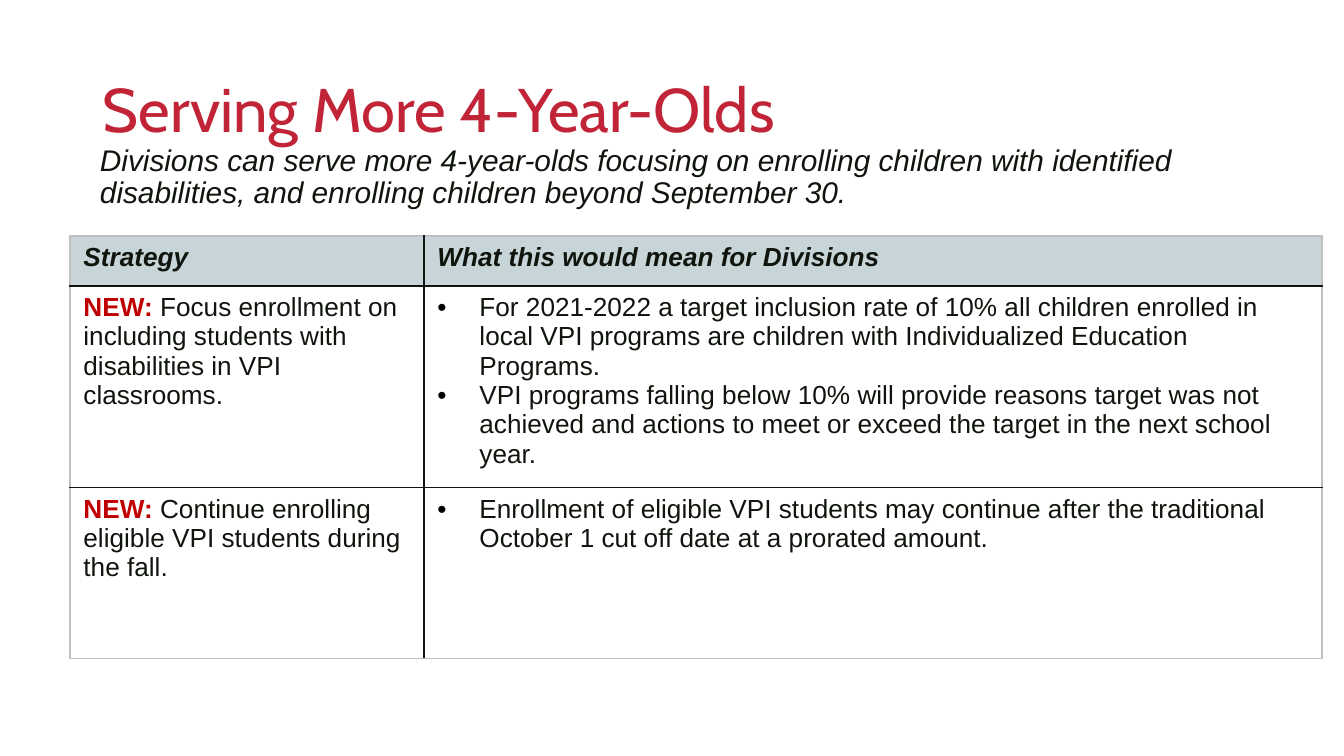
from lxml.etree import SubElement
from pptx import Presentation
from pptx.dml.color import RGBColor
from pptx.enum.text import MSO_ANCHOR
from pptx.oxml.ns import qn
from pptx.util import Pt

EMU_PER_PX = 914400 / 134.4

CRIMSON = RGBColor(0xC1, 0x24, 0x36)
RED = RGBColor(0xC0, 0x00, 0x00)
INK = RGBColor(0x0F, 0x15, 0x0D)
BLACK = RGBColor(0x00, 0x00, 0x00)
WHITE = RGBColor(0xFF, 0xFF, 0xFF)
HEADER_BLUE = RGBColor(0xC7, 0xD4, 0xD8)
FRAME_GREY = RGBColor(0xBF, 0xBF, 0xBF)

TITLE = {"name": "Cabin", "size": Pt(33), "color": CRIMSON}
SUBTITLE = {"name": "Arial", "size": Pt(16), "italic": True, "color": INK}
BODY = {"name": "Arial", "size": Pt(14), "color": INK}
HEADER = {**BODY, "bold": True, "italic": True}
NEW_TAG = {**BODY, "bold": True, "color": RED}

COLUMN_WIDTHS = [354, 898]
ROW_HEIGHTS = [50, 190, 171]
BULLET_INDENT = 42

HEADINGS = ["Strategy", "What this would mean for Divisions"]
STRATEGIES = [
    ("Focus enrollment on including students with disabilities in VPI classrooms.",
     ["For 2021-2022 a target inclusion rate of 10% all children enrolled in "
      "local VPI programs are children with Individualized Education Programs.",
      "VPI programs falling below 10% will provide reasons target was not "
      "achieved and actions to meet or exceed the target in the next school year."]),
    ("Continue enrolling eligible VPI students during the fall.",
     ["Enrollment of eligible VPI students may continue after the traditional "
      "October 1 cut off date at a prorated amount."]),
]


def px(length):
    return round(length * EMU_PER_PX)


def add_run(paragraph, text, style):
    run = paragraph.add_run()
    run.text = text
    for attribute, value in style.items():
        if attribute == "color":
            run.font.color.rgb = value
        else:
            setattr(run.font, attribute, value)


def add_text(slide, box, text, style, anchor, indent=0):
    frame = slide.shapes.add_textbox(*map(px, box)).text_frame
    layout = {"word_wrap": True, "vertical_anchor": anchor,
              "margin_left": px(10), "margin_right": px(10),
              "margin_top": px(5), "margin_bottom": px(5)}
    for attribute, value in layout.items():
        setattr(frame, attribute, value)
    paragraph = frame.paragraphs[0]
    paragraph.line_spacing = 0.9
    if indent:
        paragraph._p.get_or_add_pPr().set("marL", str(px(indent)))
    add_run(paragraph, text, style)


def add_solid_fill(parent, color):
    fill = SubElement(parent, qn("a:solidFill"))
    SubElement(fill, qn("a:srgbClr")).set("val", str(color))


def add_bullet(paragraph):
    properties = paragraph._p.get_or_add_pPr()
    properties.set("marL", str(px(BULLET_INDENT)))
    properties.set("indent", str(-px(BULLET_INDENT)))
    bullet_color = SubElement(properties, qn("a:buClr"))
    SubElement(bullet_color, qn("a:srgbClr")).set("val", str(BLACK))
    SubElement(properties, qn("a:buFont")).set("typeface", "Arial")
    SubElement(properties, qn("a:buChar")).set("char", "•")


def fill_cell(cell, color, outer_sides):
    """Set the borders, grey on outer sides and dark inside, then the fill."""
    properties = cell._tc.get_or_add_tcPr()
    for side in "LRTB":
        line = SubElement(properties, qn(f"a:ln{side}"), w=str(Pt(1)))
        add_solid_fill(line, FRAME_GREY if side in outer_sides else INK)
    cell.fill.solid()
    cell.fill.fore_color.rgb = color


def add_strategy_table(slide, left, top):
    row_count, column_count = len(ROW_HEIGHTS), len(COLUMN_WIDTHS)
    table = slide.shapes.add_table(
        row_count, column_count, px(left), px(top),
        px(sum(COLUMN_WIDTHS)), px(sum(ROW_HEIGHTS))).table
    for column, width in zip(table.columns, COLUMN_WIDTHS):
        column.width = px(width)
    for row, height in zip(table.rows, ROW_HEIGHTS):
        row.height = px(height)

    for r in range(row_count):
        for c in range(column_count):
            edges = {"L": c == 0, "R": c == column_count - 1,
                     "T": r == 0, "B": r == row_count - 1}
            outer_sides = [side for side, is_outer in edges.items() if is_outer]
            fill_cell(table.cell(r, c), WHITE if r else HEADER_BLUE, outer_sides)

    for c, heading in enumerate(HEADINGS):
        add_run(table.cell(0, c).text_frame.paragraphs[0], heading, HEADER)
    for r, (strategy, meanings) in enumerate(STRATEGIES, start=1):
        strategy_paragraph = table.cell(r, 0).text_frame.paragraphs[0]
        add_run(strategy_paragraph, "NEW: ", NEW_TAG)
        add_run(strategy_paragraph, strategy, BODY)
        frame = table.cell(r, 1).text_frame
        for i, meaning in enumerate(meanings):
            paragraph = frame.add_paragraph() if i else frame.paragraphs[0]
            add_bullet(paragraph)
            add_run(paragraph, meaning, BODY)


def main():
    presentation = Presentation()
    presentation.slide_width = px(1344)
    presentation.slide_height = px(756)
    slide = presentation.slides.add_slide(presentation.slide_layouts[6])
    add_text(slide, (93, 40, 1159, 146), "Serving More 4-Year-Olds",
             TITLE, MSO_ANCHOR.MIDDLE)
    add_text(slide, (70, 141, 1173, 480),
             "Divisions can serve more 4-year-olds focusing on enrolling children "
             "with identified disabilities, and enrolling children beyond "
             "September 30.", SUBTITLE, MSO_ANCHOR.TOP, indent=20)
    add_strategy_table(slide, 70, 236)
    presentation.save("out.pptx")


if __name__ == "__main__":
    main()
